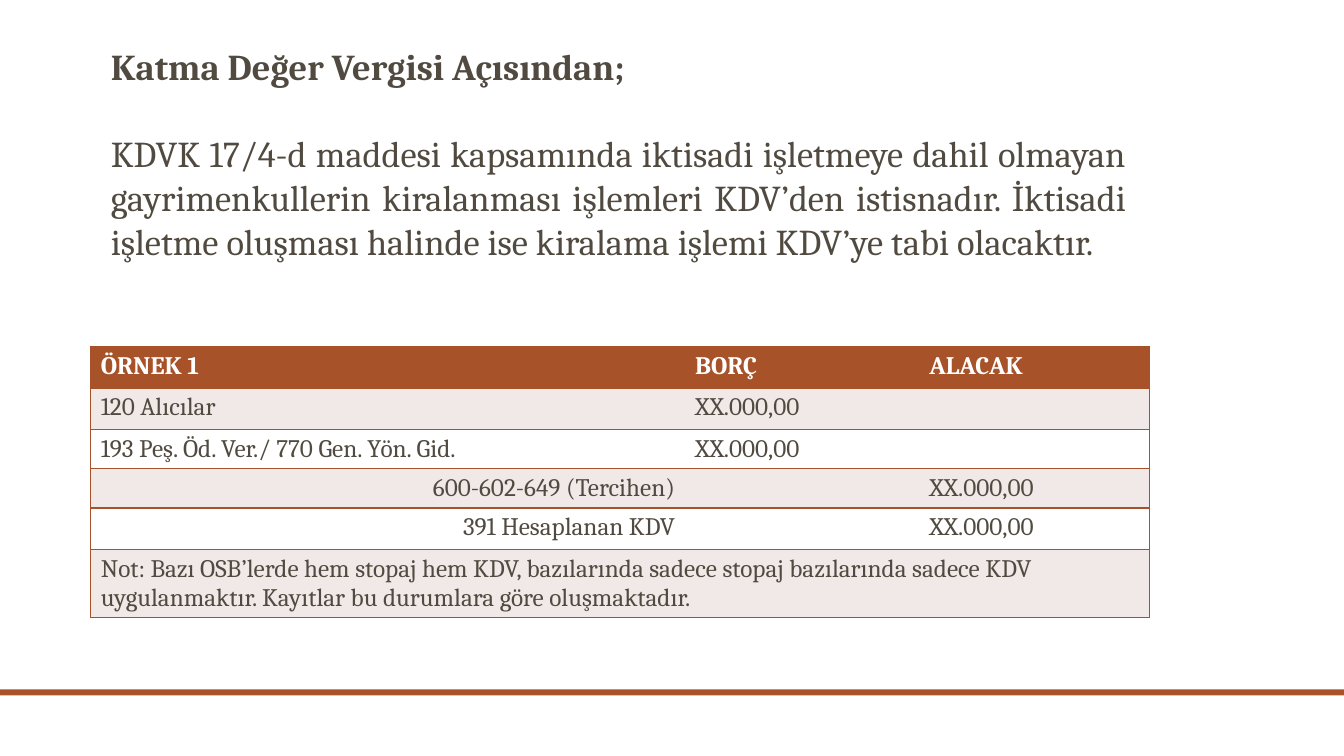
from dataclasses import dataclass

from lxml.etree import SubElement
from pptx import Presentation
from pptx.dml.color import RGBColor
from pptx.enum.shapes import MSO_SHAPE
from pptx.enum.text import PP_ALIGN
from pptx.oxml.ns import qn
from pptx.util import Inches, Pt


@dataclass(frozen=True)
class Theme:
    font: str = "Cambria"
    accent: str = "A85229"
    ink: str = "514A40"
    white: str = "FFFFFF"
    band: str = "F1E9E8"
    body_size: int = 26
    table_size: int = 18
    border: int = 1


THEME = Theme()
HEADING = "Katma Değer Vergisi Açısından;"
BODY = (
    "KDVK 17/4-d maddesi kapsamında iktisadi işletmeye dahil olmayan "
    "gayrimenkullerin kiralanması işlemleri KDV’den istisnadır. İktisadi "
    "işletme oluşması halinde ise kiralama işlemi KDV’ye tabi olacaktır."
)
NOTE = (
    "Not: Bazı OSB’lerde hem stopaj hem KDV, bazılarında sadece stopaj "
    "bazılarında sadece KDV uygulanmaktır. Kayıtlar bu durumlara göre "
    "oluşmaktadır."
)
AMOUNT = "XX.000,00"
ENTRIES = [
    ("ÖRNEK 1", "BORÇ", "ALACAK"),
    ("120 Alıcılar", AMOUNT, ""),
    ("193 Peş. Öd. Ver./ 770 Gen. Yön. Gid.", AMOUNT, ""),
    ("600-602-649 (Tercihen)", "", AMOUNT),
    ("391 Hesaplanan KDV", "", AMOUNT),
    (NOTE, "", ""),
]
COL_WIDTHS = (5.89, 2.32, 2.28)
ROW_HEIGHTS = (0.41, 0.41, 0.39, 0.39, 0.41, 0.67)


def style(p, size, color, bold=False):
    p.font.name = THEME.font
    p.font.size = Pt(size)
    p.font.bold = bold
    p.font.color.rgb = RGBColor.from_string(color)


def set_borders(cell, sides):
    tcPr = cell._tc.get_or_add_tcPr()
    for side in "LRTB":
        ln = SubElement(tcPr, qn(f"a:ln{side}"), w=str(Pt(THEME.border)))
        if side in sides:
            fill = SubElement(ln, qn("a:solidFill"))
            SubElement(fill, qn("a:srgbClr"), val=THEME.accent)
        else:
            SubElement(ln, qn("a:noFill"))


def add_footer_bar(slide, left, top, width, height):
    sp = slide.shapes.add_shape(
        MSO_SHAPE.RECTANGLE, Inches(left), Inches(top), Inches(width), Inches(height)
    )
    sp.shadow.inherit = False
    sp.fill.solid()
    sp.fill.fore_color.rgb = RGBColor.from_string(THEME.accent)
    sp.line.fill.background()


def add_explanation(slide, left, top, width, height):
    tf = slide.shapes.add_textbox(
        Inches(left), Inches(top), Inches(width), Inches(height)
    ).text_frame
    tf.word_wrap = True
    p = tf.paragraphs[0]
    p.text = HEADING
    style(p, THEME.body_size, THEME.ink, bold=True)
    p = tf.add_paragraph()
    p.text = BODY
    p.alignment = PP_ALIGN.JUSTIFY
    p.space_before = Pt(31)
    style(p, THEME.body_size, THEME.ink)


def add_ledger(slide, left, top, width, height):
    table = slide.shapes.add_table(
        len(ENTRIES), len(COL_WIDTHS),
        Inches(left), Inches(top), Inches(width), Inches(height),
    ).table
    for col, share in zip(table.columns, COL_WIDTHS):
        col.width = Inches(width * share / sum(COL_WIDTHS))
    for row, share in zip(table.rows, ROW_HEIGHTS):
        row.height = Inches(height * share / sum(ROW_HEIGHTS))
    last_row, last_col = len(ENTRIES) - 1, len(COL_WIDTHS) - 1
    table.cell(last_row, 0).merge(table.cell(last_row, last_col))

    for r, entry in enumerate(ENTRIES):
        header = r == 0
        fill = THEME.accent if header else THEME.band if r % 2 else THEME.white
        for c, text in enumerate(entry):
            cell = table.cell(r, c)
            at_right = c == last_col or cell.is_merge_origin
            set_borders(cell, "TB" + "L" * (c == 0) + "R" * at_right)
            cell.fill.solid()
            cell.fill.fore_color.rgb = RGBColor.from_string(fill)
            p = cell.text_frame.paragraphs[0]
            p.text = text
            if c == 0 and entry[2] == AMOUNT:
                p.alignment = PP_ALIGN.RIGHT
            style(p, THEME.table_size, THEME.white if header else THEME.ink, header)


def main():
    prs = Presentation()
    prs.slide_width, prs.slide_height = Inches(13.33), Inches(7.5)
    slide = prs.slides.add_slide(prs.slide_layouts[6])
    add_footer_bar(slide, 0, 6.84, 13.33, 0.06)
    add_ledger(slide, 0.9, 3.44, 10.5, sum(ROW_HEIGHTS))
    add_explanation(slide, 1, 0.39, 10.28, 2.73)
    prs.save("out.pptx")


if __name__ == "__main__":
    main()
